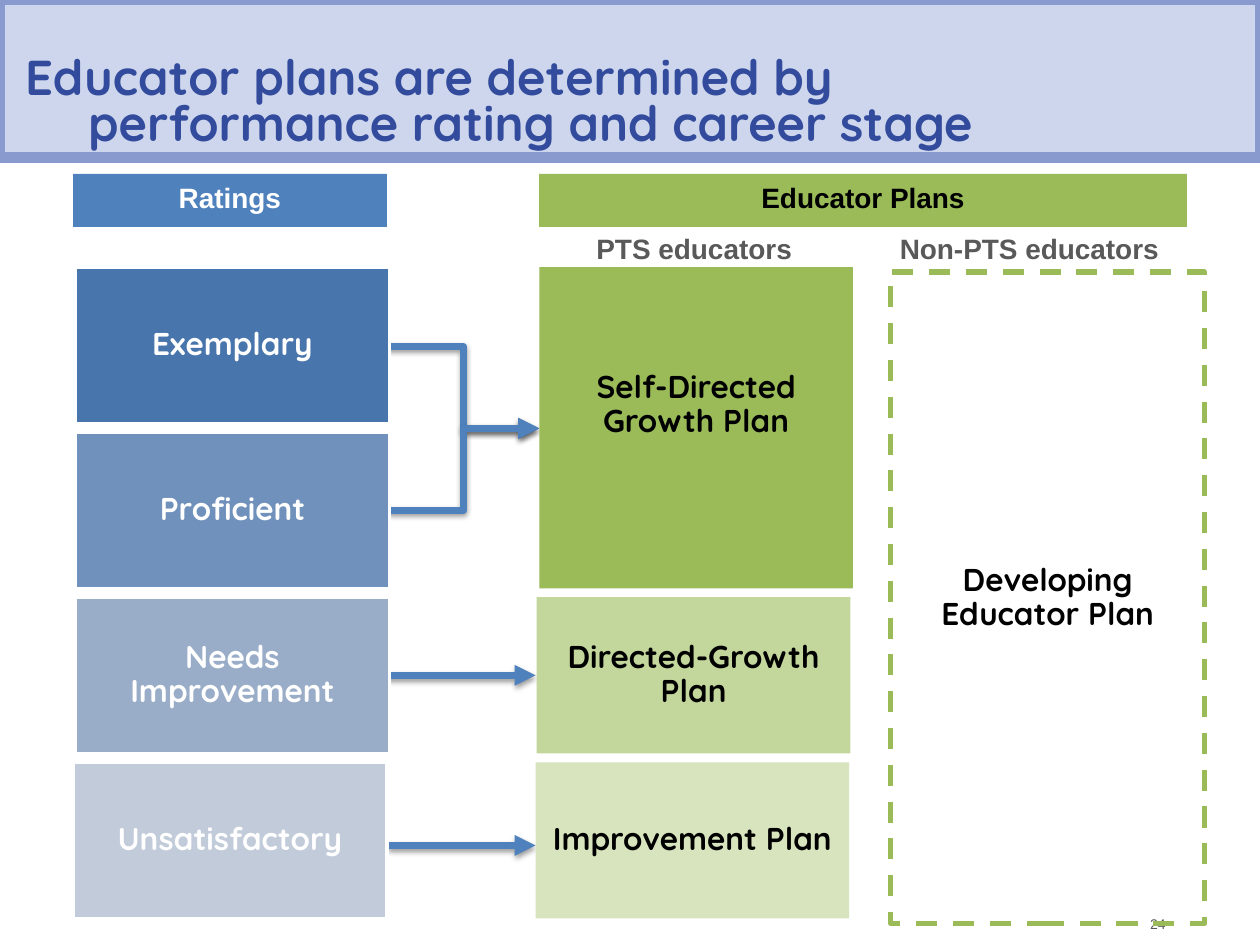
"""Build a slide that maps educator ratings to educator plans."""
from dataclasses import dataclass
from typing import Any

from lxml.etree import SubElement
from pptx import Presentation
from pptx.dml.color import RGBColor
from pptx.enum.dml import MSO_LINE
from pptx.enum.shapes import MSO_CONNECTOR, MSO_SHAPE
from pptx.enum.text import MSO_ANCHOR, MSO_AUTO_SIZE, PP_ALIGN
from pptx.oxml.ns import qn
from pptx.util import Inches, Pt

HUES = {
    "white": "FFFFFF", "black": "000000", "gray": "595959",
    "pale": "CED6ED", "edge": "899ACE", "navy": "334B9C",
    "blue": "4F81BD", "green": "9BBB59", "leaf": "C3D69B", "mint": "D7E4BD",
    "deep": "4875AC", "mid": "7091BB", "light": "9AADC8", "faint": "C1CBD9",
}
HEAD = {"name": "Arial", "size": Pt(16), "bold": True}
CARD = {"name": "Quicksand", "size": Pt(18), "bold": True}
TITLE = {"name": "Quicksand", "size": Pt(28), "bold": True}
NOTE = {"name": "Arial", "size": Pt(8), "bold": False}
TOP, STEP, WIDE, HIGH = 2.12, 1.31, 2.49, 1.24


@dataclass
class Box:
    text: str
    left: float
    top: float
    width: float
    height: float
    ink: str
    font: dict[str, Any]
    fill: str | None = None
    line: str | None = None
    weight: float = 2
    dash: bool = False
    foot: float = 0.04
    align: Any = PP_ALIGN.CENTER


@dataclass
class Arrow:
    start: float
    end: float
    tip: float


def tint(name: str) -> RGBColor:
    return RGBColor.from_string(HUES[name])


def apply(target: Any, values: dict[str, Any]) -> None:
    for key, value in values.items():
        setattr(target, key, value)


def paint(shape: Any, fill: str | None, line: str | None, weight: float) -> None:
    if fill:
        shape.fill.solid()
        shape.fill.fore_color.rgb = tint(fill)
    else:
        shape.fill.background()
    if line:
        shape.line.color.rgb = tint(line)
        shape.line.width = Pt(weight)
    else:
        shape.line.fill.background()


def draw_box(slide: Any, box: Box) -> None:
    place = [Inches(n) for n in (box.left, box.top, box.width, box.height)]
    if box.fill or box.line:
        shape = slide.shapes.add_shape(MSO_SHAPE.RECTANGLE, *place)
        shape.shadow.inherit = False
        paint(shape, box.fill, box.line, box.weight)
    else:
        shape = slide.shapes.add_textbox(*place)
    if box.dash:
        shape.line.dash_style = MSO_LINE.DASH
    frame = shape.text_frame
    frame.word_wrap = True
    para = frame.paragraphs[0]
    if box.font is CARD:
        apply(frame, {
            "margin_left": Inches(0.07), "margin_right": Inches(0.07),
            "margin_top": Inches(0.04), "margin_bottom": Inches(box.foot),
        })
        para.line_spacing = 0.9
    frame.vertical_anchor = MSO_ANCHOR.TOP if box.font is HEAD else MSO_ANCHOR.MIDDLE
    para.text = box.text
    para.alignment = box.align
    apply(para.font, box.font)
    para.font.color.rgb = tint(box.ink)


def draw_arrow(slide: Any, arrow: Arrow) -> None:
    kind = MSO_CONNECTOR.STRAIGHT if arrow.start == arrow.end else MSO_CONNECTOR.ELBOW
    ends = (3.08, arrow.start, arrow.tip, arrow.end)
    link = slide.shapes.add_connector(kind, *[Inches(n) for n in ends])
    link.line.color.rgb = tint("blue")
    link.line.width = Pt(4)
    SubElement(link.line._get_or_add_ln(), qn("a:tailEnd"), type="triangle")
    effects = SubElement(link._element.spPr, qn("a:effectLst"))
    shade = SubElement(effects, qn("a:outerShdw"), blurRad="40000", dist="20000",
                       dir="5400000", rotWithShape="0")
    color = SubElement(shade, qn("a:srgbClr"), val=HUES["black"])
    SubElement(color, qn("a:alpha"), val="38000")


def draw_title(slide: Any) -> None:
    title = slide.shapes.title
    apply(title, {"left": 0, "top": 0, "width": Inches(10), "height": Inches(1.25)})
    paint(title, "pale", "edge", 6)
    frame = title.text_frame
    apply(frame, {
        "margin_left": Inches(0.2), "margin_right": Inches(0.5),
        "margin_top": 0, "margin_bottom": Inches(0.05), "word_wrap": True,
        "vertical_anchor": MSO_ANCHOR.BOTTOM, "auto_size": MSO_AUTO_SIZE.NONE,
    })
    para = frame.paragraphs[0]
    para.text = "Educator plans are determined by \vperformance rating and career stage"
    apply(para, {"alignment": PP_ALIGN.LEFT, "line_spacing": Pt(26)})
    props = para._p.get_or_add_pPr()
    props.set("marL", str(Inches(0.5)))
    props.set("indent", str(Inches(-0.5)))
    for run in para.runs:
        apply(run.font, TITLE)
        run.font.color.rgb = tint("navy")


def main() -> None:
    deck = Presentation()
    deck.slide_width, deck.slide_height = Inches(10), Inches(7.5)
    slide = deck.slides.add_slide(deck.slide_layouts[5])
    draw_title(slide)

    rows = [TOP + STEP * i for i in range(4)]
    heads = [
        Box("24", 8.78, 7.21, 0.57, 0.24, "gray", NOTE, align=PP_ALIGN.RIGHT),
        Box("Ratings", 0.58, 1.38, WIDE, 0.42, "white", HEAD, "blue"),
        Box("Educator Plans", 4.28, 1.38, 5.14, 0.42, "black", HEAD, "green"),
        Box("PTS educators", 4.28, 1.79, 2.46, 0.5, "gray", HEAD),
        Box("Non-PTS educators", 6.92, 1.79, 2.5, 0.5, "gray", HEAD),
    ]
    grades = [
        ("Exemplary", 0.6, "deep"), ("Proficient", 0.6, "mid"),
        ("Needs Improvement", 0.6, "light"), ("Unsatisfactory", 0.58, "faint"),
    ]
    cards = [
        Box(text, left, top, WIDE, HIGH, "white", CARD, fill, "white")
        for (text, left, fill), top in zip(grades, rows)
    ]
    plans = [
        Box("Self-Directed Growth Plan", 4.28, TOP, WIDE, STEP + HIGH, "black", CARD,
            "green", foot=0.4),
        Box("Directed-Growth Plan", 4.26, rows[2], WIDE, HIGH, "black", CARD, "leaf"),
        Box("Improvement Plan", 4.25, rows[3], WIDE, HIGH, "black", CARD, "mint"),
        Box("Developing Educator Plan", 7.07, 2.16, WIDE, 5.17, "black", CARD,
            line="green", weight=3, dash=True),
    ]
    arrows = [
        Arrow(2.75, 3.4, 4.28), Arrow(4.05, 3.4, 4.28),
        Arrow(5.36, 5.36, 4.25), Arrow(6.71, 6.71, 4.25),
    ]
    for box in heads:
        draw_box(slide, box)
    for arrow in arrows:
        draw_arrow(slide, arrow)
    for box in cards + plans:
        draw_box(slide, box)
    deck.save("out.pptx")


if __name__ == "__main__":
    main()
